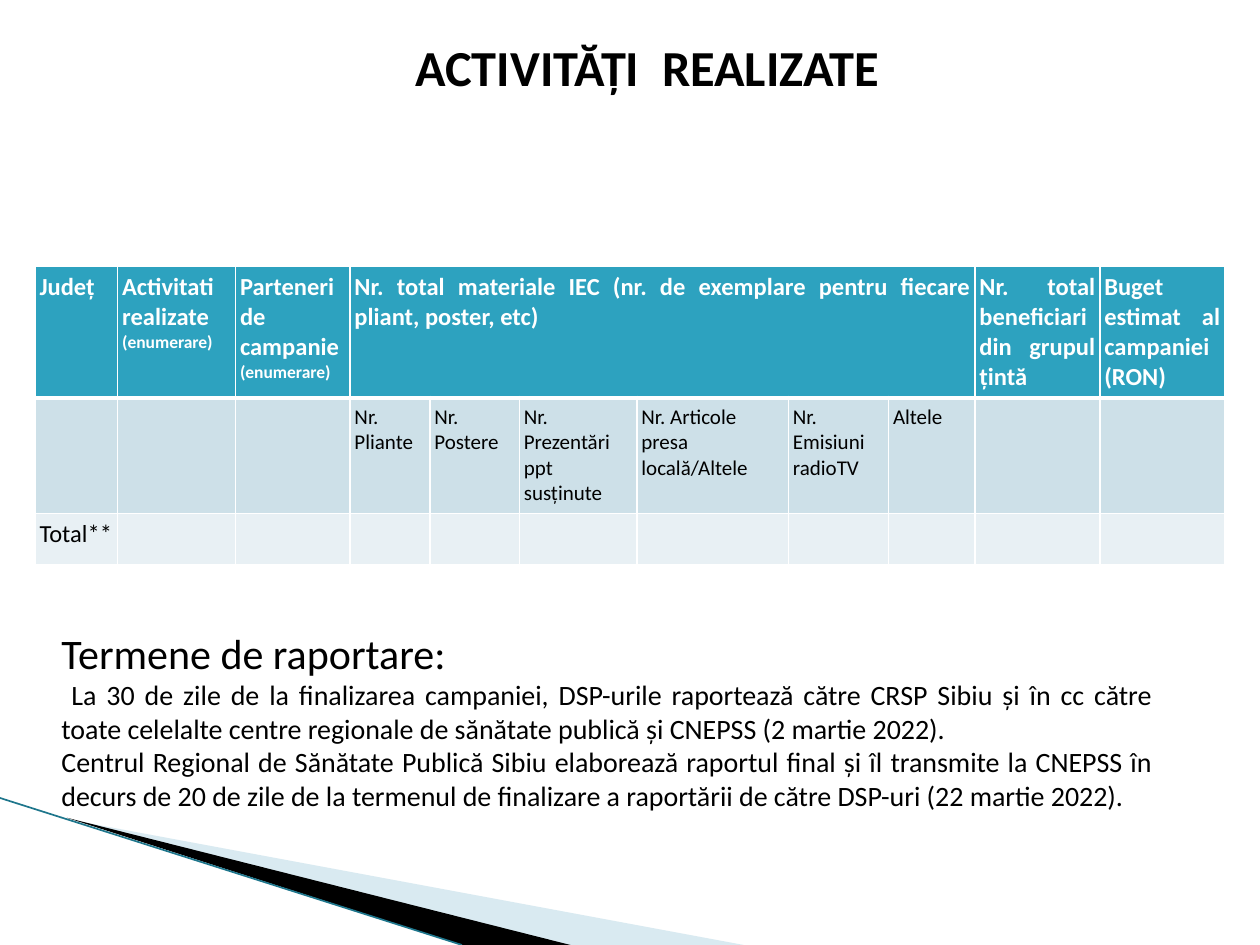
from lxml import etree
from pptx import Presentation
from pptx.dml.color import RGBColor
from pptx.enum.text import MSO_ANCHOR, PP_ALIGN
from pptx.oxml.ns import qn
from pptx.util import Pt

CENTER, JUSTIFY, LEFT = PP_ALIGN.CENTER, PP_ALIGN.JUSTIFY, PP_ALIGN.LEFT
MIDDLE, TOP = MSO_ANCHOR.MIDDLE, MSO_ANCHOR.TOP
FONT = "Calibri"
BLACK, WHITE = "000000", "FFFFFF"

# Content
TITLE = "ACTIVITĂȚI  REALIZATE"
# Header cells: column, columns spanned, (text, size) paragraphs
HEADERS = [
    (0, 1, [("Județ", 14)]),
    (1, 1, [("Activitati realizate", 14), ("(enumerare)", 10)]),
    (2, 1, [("Parteneri de campanie", 14), ("(enumerare)", 10)]),
    (3, 6, [("Nr. total materiale IEC (nr. de exemplare pentru fiecare "
             "pliant, poster, etc)", 14)]),
    (9, 1, [("Nr. total beneficiari din grupul țintă", 14)]),
    (10, 1, [("Buget estimat al campaniei (RON)", 14)]),
]
MATERIALS = ["Nr. Pliante", "Nr. Postere", "Nr. Prezentări ppt susținute",
             "Nr. Articole presa locală/Altele", "Nr. Emisiuni radioTV", "Altele"]
TOTAL = "Total**"
DEADLINES = [
    ("Termene de raportare:", 24, LEFT),
    (" La 30 de zile de la finalizarea campaniei, DSP-urile raportează către CRSP "
     "Sibiu și în cc către toate celelalte centre regionale de sănătate publică și "
     "CNEPSS (2 martie 2022).", 16, JUSTIFY),
    ("Centrul Regional de Sănătate Publică Sibiu elaborează raportul final și îl "
     "transmite la CNEPSS în decurs de 20 de zile de la termenul de finalizare a "
     "raportării de către DSP-uri (22 martie 2022).", 16, JUSTIFY),
]
COLUMN_WIDTHS = [47.2, 67.4, 65.4, 45.7, 51.1, 67.2, 86.6, 57.2, 49.4, 71.4, 71.4]
ROW_HEIGHTS = [74, 66, 29]
ROW_FILLS = ["2DA2BF", "CDE0E8", "E8F0F4"]
# Corner wedges: points, fill, opacity in percent
WEDGES = [
    ([(39.6, 468.4), (425, 540), (325, 540)], "A0CBDC", 40),
    ([(38.2, 467.3), (326, 540), (264, 540)], BLACK, 100),
]


def rgb(value):
    return RGBColor.from_string(value)


def write(paragraph, text, size, color=BLACK, bold=False, align=LEFT):
    paragraph.alignment = align
    run = paragraph.add_run()
    run.text = text
    run.font.name, run.font.size, run.font.bold = FONT, Pt(size), bold
    run.font.color.rgb = rgb(color)


def next_paragraph(frame, index):
    return frame.add_paragraph() if index else frame.paragraphs[0]


def set_borders(cell, top, bottom):
    properties = cell._tc.get_or_add_tcPr()
    edges = [("a:lnL", 1), ("a:lnR", 1), ("a:lnT", top), ("a:lnB", bottom)]
    for position, (tag, width) in enumerate(edges):
        edge = etree.Element(qn(tag), w=str(Pt(width)))
        fill = etree.SubElement(edge, qn("a:solidFill"))
        etree.SubElement(fill, qn("a:srgbClr"), val=WHITE)
        properties.insert(position, edge)


presentation = Presentation()
presentation.slide_width, presentation.slide_height = Pt(720), Pt(540)
slide = presentation.slides.add_slide(presentation.slide_layouts[5])
shapes = slide.shapes

# Corner decoration
for points, color, opacity in WEDGES:
    corners = [(Pt(x), Pt(y)) for x, y in points]
    builder = shapes.build_freeform(*corners[0], scale=1.0)
    builder.add_line_segments(corners[1:], close=True)
    wedge = builder.convert_to_shape()
    wedge.shadow.inherit = False
    wedge.fill.solid()
    wedge.fill.fore_color.rgb = rgb(color)
    wedge.line.fill.background()
    if opacity < 100:
        fill_color = wedge._element.spPr.find(qn("a:solidFill"))[0]
        etree.SubElement(fill_color, qn("a:alpha"), val=str(opacity * 1000))

edge_line = shapes.add_connector(1, Pt(0), Pt(456), Pt(264), Pt(540))
edge_line.line.color.rgb = rgb("1E768C")
edge_line.line.width = Pt(0.95)
etree.SubElement(edge_line._element.spPr, qn("a:effectLst"))

# Title
title = shapes.title
title.left, title.top, title.width, title.height = Pt(28), Pt(5), Pt(684), Pt(66)
title.text_frame.word_wrap = True
title.text_frame.vertical_anchor = MIDDLE
write(title.text_frame.paragraphs[0], TITLE, 28.8, bold=True, align=CENTER)

# Activities table
activities = shapes.add_table(
    len(ROW_HEIGHTS), len(COLUMN_WIDTHS), Pt(20), Pt(152),
    Pt(sum(COLUMN_WIDTHS)), Pt(sum(ROW_HEIGHTS))).table
for column, width in zip(activities.columns, COLUMN_WIDTHS):
    column.width = Pt(width)
for row_index, (row, height) in enumerate(zip(activities.rows, ROW_HEIGHTS)):
    row.height = Pt(height)
    for cell in row.cells:
        cell.margin_left = cell.margin_right = Pt(2.6)
        cell.margin_top = cell.margin_bottom = Pt(3.6)
        cell.vertical_anchor = TOP
        cell.fill.solid()
        cell.fill.fore_color.rgb = rgb(ROW_FILLS[row_index])
        set_borders(cell, top=3 if row_index == 1 else 1,
                    bottom=3 if row_index == 0 else 1)

for column, span, paragraphs in HEADERS:
    header = activities.cell(0, column)
    if span > 1:
        header.merge(activities.cell(0, column + span - 1))
    for index, (text, size) in enumerate(paragraphs):
        write(next_paragraph(header.text_frame, index), text, size,
              WHITE, bold=True, align=JUSTIFY)
for column, material in enumerate(MATERIALS, start=3):
    write(activities.cell(1, column).text_frame.paragraphs[0], material, 12)
write(activities.cell(2, 0).text_frame.paragraphs[0], TOTAL, 14)

# Reporting deadlines
deadlines = shapes.add_textbox(Pt(28), Pt(355), Pt(638), Pt(114)).text_frame
deadlines.word_wrap = True
for index, (text, size, align) in enumerate(DEADLINES):
    write(next_paragraph(deadlines, index), text, size, align=align)

presentation.save("out.pptx")
